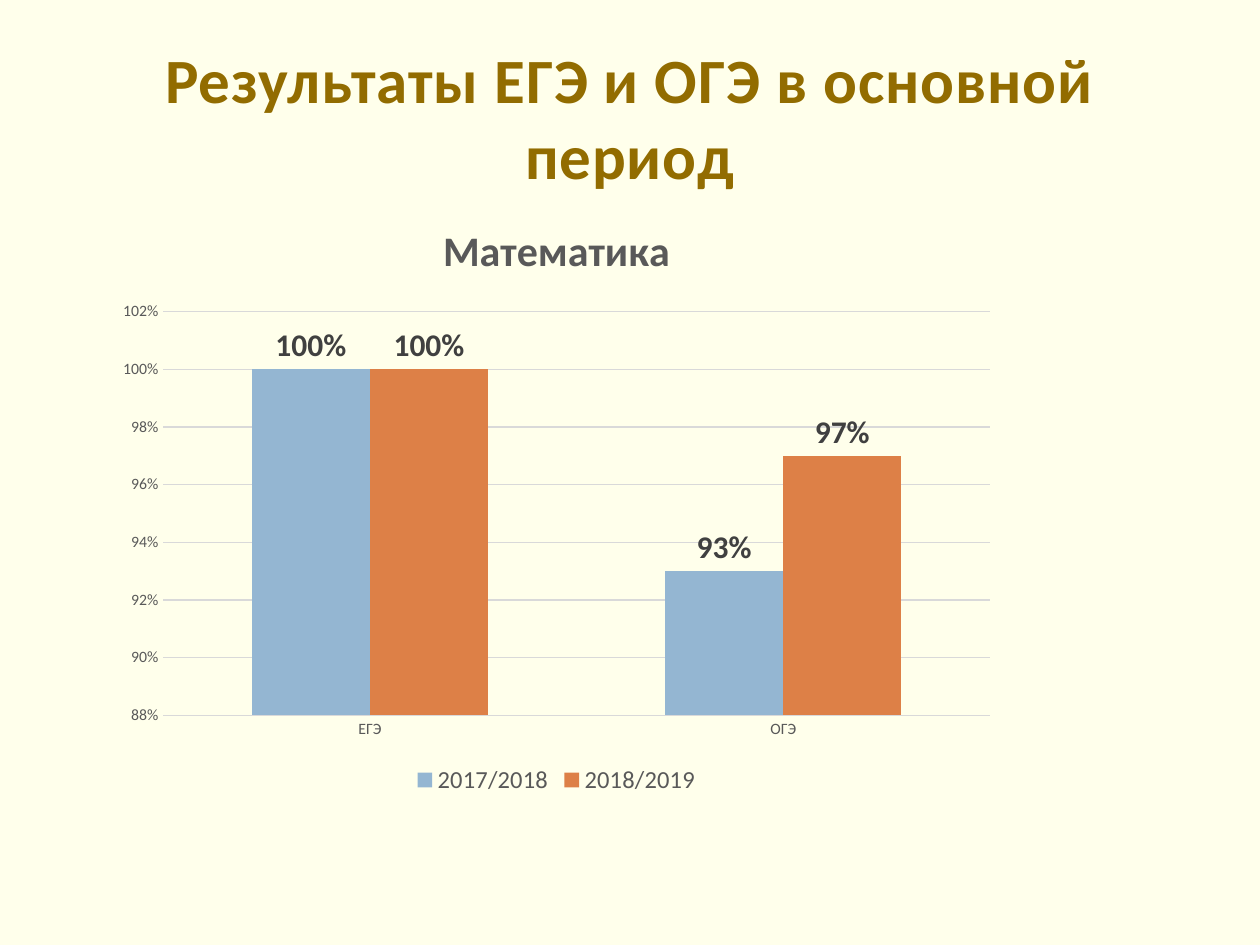
from pptx import Presentation
from pptx.chart.data import CategoryChartData
from pptx.dml.color import RGBColor
from pptx.enum.chart import (XL_CHART_TYPE, XL_LABEL_POSITION,
                             XL_LEGEND_POSITION, XL_TICK_MARK)
from pptx.enum.text import MSO_ANCHOR, PP_ALIGN
from pptx.util import Pt

COLUMNS = XL_CHART_TYPE.COLUMN_CLUSTERED
OUTSIDE = XL_LABEL_POSITION.OUTSIDE_END
BOTTOM = XL_LEGEND_POSITION.BOTTOM
NO_TICK = XL_TICK_MARK.NONE
MIDDLE, CENTER = MSO_ANCHOR.MIDDLE, PP_ALIGN.CENTER

# Content
TITLE = "Результаты ЕГЭ и ОГЭ в основной период"
HEADING = "Математика"
EXAMS = ["ЕГЭ", "ОГЭ"]
YEARS = [("2017/2018", (1, 0.93), "94B6D2"),
         ("2018/2019", (1, 0.97), "DD8047")]
SCALE = (0.88, 1.02, 0.02)
PERCENT = "0%"

# Places: left, top, width, height in points
SLIDE = (720, 540)
TITLE_BOX = (36, 21.6, 648, 90)
CHART_BOX = (60, 111.6, 516, 345.6)

THEME = dict(
    font="Calibri", page="FFFFEB", title="926C00", text="595959",
    label="404040", grid="D9D9D9",
    title_size=36, head_size=24, label_size=18, key_size=14, axis_size=9)


def style(font, size, color, bold=False):
    font.name = THEME["font"]
    font.size = Pt(THEME[size])
    font.bold = bold
    font.color.rgb = RGBColor.from_string(THEME[color])


def write(frame, text, size, color, bold=False, space=None):
    para = frame.paragraphs[0]
    para.alignment = CENTER
    run = para.add_run()
    run.text = text
    style(run.font, size, color, bold)
    if space:
        run.font._element.set("spc", str(space))


def paint(fill, color):
    fill.solid()
    fill.fore_color.rgb = RGBColor.from_string(color)


deck = Presentation()
deck.slide_width, deck.slide_height = map(Pt, SLIDE)
slide = deck.slides.add_slide(deck.slide_layouts[5])
paint(slide.background.fill, THEME["page"])

# Title
title = slide.shapes.title
title.left, title.top, title.width, title.height = map(Pt, TITLE_BOX)
title.text_frame.vertical_anchor = MIDDLE
title.text_frame.word_wrap = True
write(title.text_frame, TITLE, "title_size", "title", bold=True, space=50)

# Chart
data = CategoryChartData(number_format=PERCENT)
data.categories = EXAMS
for name, values, _ in YEARS:
    data.add_series(name, values)
chart = slide.shapes.add_chart(COLUMNS, *map(Pt, CHART_BOX), data).chart
chart.font.name = THEME["font"]
chart.has_title = True
write(chart.chart_title.text_frame, HEADING, "head_size", "text", bold=True)
chart.chart_title.include_in_layout = False

# Columns and their labels
plot = chart.plots[0]
plot.gap_width, plot.overlap = 150, 0
plot.vary_by_categories = False
for series, (_, _, color) in zip(plot.series, YEARS):
    paint(series.format.fill, color)
    labels = series.data_labels
    labels.show_value = True
    labels.position = OUTSIDE
    labels.number_format = PERCENT
    labels.number_format_is_linked = False
    style(labels.font, "label_size", "label", bold=True)

# Axes
for axis in (chart.category_axis, chart.value_axis):
    axis.major_tick_mark = axis.minor_tick_mark = NO_TICK
    axis.format.line.fill.background()
    style(axis.tick_labels.font, "axis_size", "text")
scale = chart.value_axis
scale.minimum_scale, scale.maximum_scale, scale.major_unit = SCALE
scale.tick_labels.number_format = PERCENT
scale.tick_labels.number_format_is_linked = False
scale.has_major_gridlines = True
grid = scale.major_gridlines.format.line
grid.width = Pt(0.75)
paint(grid.fill, THEME["grid"])

# Legend
chart.has_legend = True
chart.legend.position = BOTTOM
chart.legend.include_in_layout = False
style(chart.legend.font, "key_size", "text")

deck.save("out.pptx")
